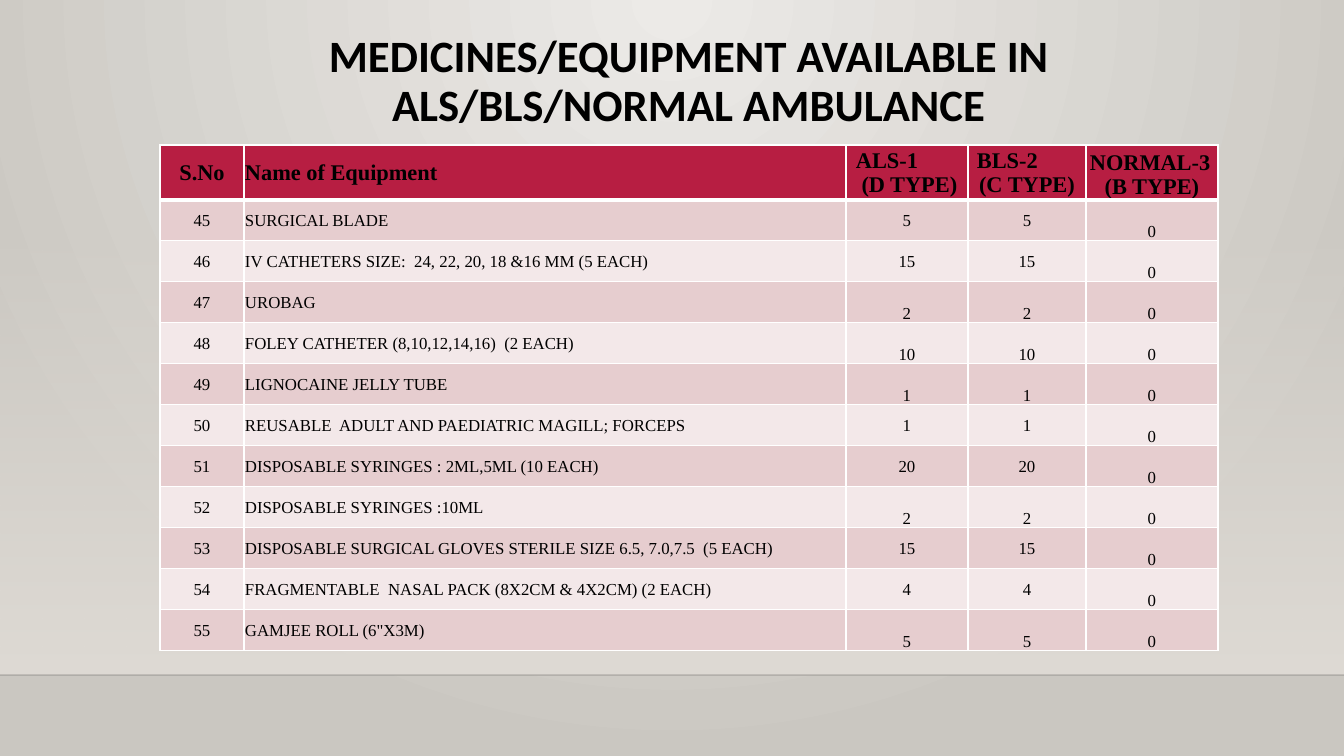
from lxml import etree
from pptx import Presentation
from pptx import util as u
from pptx.dml.color import RGBColor
from pptx.enum import shapes, text
from pptx.oxml.ns import qn

CENTER, LEFT = text.PP_ALIGN.CENTER, text.PP_ALIGN.LEFT
MIDDLE, BOTTOM, TOP = text.MSO_ANCHOR.MIDDLE, text.MSO_ANCHOR.BOTTOM, text.MSO_ANCHOR.TOP

COLUMN_WIDTHS = [84, 602, 122, 118, 132]
HEADER_HEIGHT, ROW_HEIGHT = 51, 41

# Each header line: wording, alignment, left indent in px.
HEADERS = [
    [("S.No", CENTER, 0)],
    [("Name of Equipment", LEFT, 0)],
    [("ALS-1", LEFT, 9), ("(D TYPE)", CENTER, 5)],
    [("BLS-2", LEFT, 8), ("(C TYPE)", CENTER, 0)],
    [("NORMAL-3", LEFT, 3), ("(B TYPE)", CENTER, 0)],
]

# Each item: name, ALS and BLS count, anchor of those two counts.
FIRST_NUMBER = 45
EQUIPMENT = [
    ("SURGICAL BLADE", 5, MIDDLE),
    ("IV CATHETERS SIZE:  24, 22, 20, 18 &16 MM (5 EACH)", 15, MIDDLE),
    ("UROBAG", 2, BOTTOM),
    ("FOLEY CATHETER (8,10,12,14,16)  (2 EACH)", 10, BOTTOM),
    ("LIGNOCAINE JELLY TUBE", 1, BOTTOM),
    ("REUSABLE  ADULT AND PAEDIATRIC MAGILL; FORCEPS", 1, MIDDLE),
    ("DISPOSABLE SYRINGES : 2ML,5ML (10 EACH)", 20, MIDDLE),
    ("DISPOSABLE SYRINGES :10ML", 2, BOTTOM),
    ("DISPOSABLE SURGICAL GLOVES STERILE SIZE 6.5, 7.0,7.5  (5 EACH)", 15, MIDDLE),
    ("FRAGMENTABLE  NASAL PACK (8X2CM & 4X2CM) (2 EACH)", 4, MIDDLE),
    ('GAMJEE ROLL (6"X3M)', 5, BOTTOM),
]


def px(length):
    return u.Emu(round(length * 914400 / 100.8))


def color(value):
    return RGBColor.from_string(value)


def assign(target, values):
    for name, value in values.items():
        setattr(target, name, value)


def add_alpha(element, percent):
    etree.SubElement(element, qn("a:alpha"), val=str(percent * 1000))


class Sheet:
    """Draws styled elements on the current slide."""

    title_font = {"name": "Calibri", "size": u.Pt(32), "bold": True}
    header_font = {"name": "Times New Roman", "size": u.Pt(16), "bold": True}
    body_font = {"name": "Times New Roman", "size": u.Pt(12), "bold": False}
    cell_margins = {"margin_left": px(1), "margin_right": px(1),
                    "margin_top": px(1), "margin_bottom": 0}
    header_fill, row_fills = "B71E42", ["E6CDCF", "F3E8E9"]

    def __init__(self, page):
        self.page = page

    def gradient(self, fill, colors):
        fill.gradient()
        for stop, value in zip(fill.gradient_stops, colors):
            stop.color.rgb = color(value)

    def background(self, inner, outer):
        self.gradient(self.page.background.fill, [inner, outer])
        gradient = next(self.page.element.iter(qn("a:gradFill")))
        linear = gradient.find(qn("a:lin"))
        circle = etree.Element(qn("a:path"), path="circle")
        etree.SubElement(circle, qn("a:fillToRect"),
                         l="43000", t="0", r="43000", b="100000")
        gradient.replace(linear, circle)

    def fading_band(self, left, top, width, height, value):
        band = self.page.shapes.add_shape(
            shapes.MSO_SHAPE.RECTANGLE, px(left), px(top), px(width), px(height))
        band.shadow.inherit = False
        band.line.fill.background()
        self.gradient(band.fill, [value, value])
        band.fill.gradient_angle = 270
        add_alpha(next(band._element.spPr.iter(qn("a:srgbClr"))), 0)

    def rule(self, left, right, top, value, opacity):
        rule = self.page.shapes.add_connector(
            shapes.MSO_CONNECTOR.STRAIGHT, px(left), px(top), px(right), px(top))
        rule.line.width = u.Pt(1)
        rule.line.color.rgb = color(value)
        properties = rule._element.spPr
        add_alpha(next(properties.iter(qn("a:srgbClr"))), opacity)
        etree.SubElement(properties, qn("a:effectLst"))

    def add_words(self, para, words, font, alignment, indent=0):
        if indent:
            para._p.get_or_add_pPr().set("marL", str(px(indent)))
        para.alignment = alignment
        span = para.add_run()
        span.text = words
        assign(span.font, font)
        span.font.color.rgb = color("000000")

    def title(self, left, top, width, height, words):
        box = self.page.shapes.add_textbox(px(left), px(top), px(width), px(height))
        assign(box.text_frame, {"word_wrap": True, "vertical_anchor": TOP})
        para = box.text_frame.paragraphs[0]
        para.line_spacing = 0.9
        self.add_words(para, words, self.title_font, CENTER)

    def borders(self, cell, top, bottom):
        properties = cell._tc.get_or_add_tcPr()
        sides = {"lnL": 1, "lnR": 1, "lnT": top, "lnB": bottom}
        for place, (side, points) in enumerate(sides.items()):
            line = etree.Element(qn("a:" + side), w=str(u.Pt(points)))
            solid = etree.SubElement(line, qn("a:solidFill"))
            etree.SubElement(solid, qn("a:srgbClr"), val="FFFFFF")
            properties.insert(place, line)

    def cell(self, cell, lines, font, anchor, fill, top=1, bottom=1):
        assign(cell, {**self.cell_margins, "vertical_anchor": anchor})
        cell.fill.solid()
        cell.fill.fore_color.rgb = color(fill)
        self.borders(cell, top, bottom)
        frame = cell.text_frame
        for index, (words, alignment, indent) in enumerate(lines):
            para = frame.add_paragraph() if index else frame.paragraphs[0]
            self.add_words(para, words, font, alignment, indent)

    def equipment_table(self, left, top):
        heights = [HEADER_HEIGHT] + [ROW_HEIGHT] * len(EQUIPMENT)
        table = self.page.shapes.add_table(
            len(heights), len(COLUMN_WIDTHS), px(left), px(top),
            px(sum(COLUMN_WIDTHS)), px(sum(heights))).table
        assign(table, {"first_row": False, "horz_banding": False})
        for column, width in zip(table.columns, COLUMN_WIDTHS):
            column.width = px(width)
        for row, height in zip(table.rows, heights):
            row.height = px(height)
        for column, lines in enumerate(HEADERS):
            anchor = BOTTOM if column == 4 else MIDDLE
            self.cell(table.cell(0, column), lines, self.header_font, anchor,
                      self.header_fill, bottom=3)
        for index, (name, count, anchor) in enumerate(EQUIPMENT):
            values = [FIRST_NUMBER + index, name, count, count, 0]
            anchors = [MIDDLE, MIDDLE, anchor, anchor, BOTTOM]
            for column, value in enumerate(values):
                alignment = LEFT if column == 1 else CENTER
                self.cell(table.cell(index + 1, column), [(str(value), alignment, 0)],
                          self.body_font, anchors[column], self.row_fills[index % 2],
                          top=1 if index else 3)


def main():
    deck = Presentation()
    assign(deck, {"slide_width": px(1344), "slide_height": px(756)})
    sheet = Sheet(deck.slides.add_slide(deck.slide_layouts[6]))
    sheet.background("ECEAE7", "CAC7C1")
    sheet.fading_band(0, 223, 1344, 452, "DFDBD5")
    sheet.rule(0, 1344, 675, "000001", 20)
    sheet.title(160, 29, 1058, 116,
                "MEDICINES/EQUIPMENT AVAILABLE IN ALS/BLS/NORMAL AMBULANCE")
    sheet.equipment_table(160, 145)
    deck.save("out.pptx")


if __name__ == "__main__":
    main()
